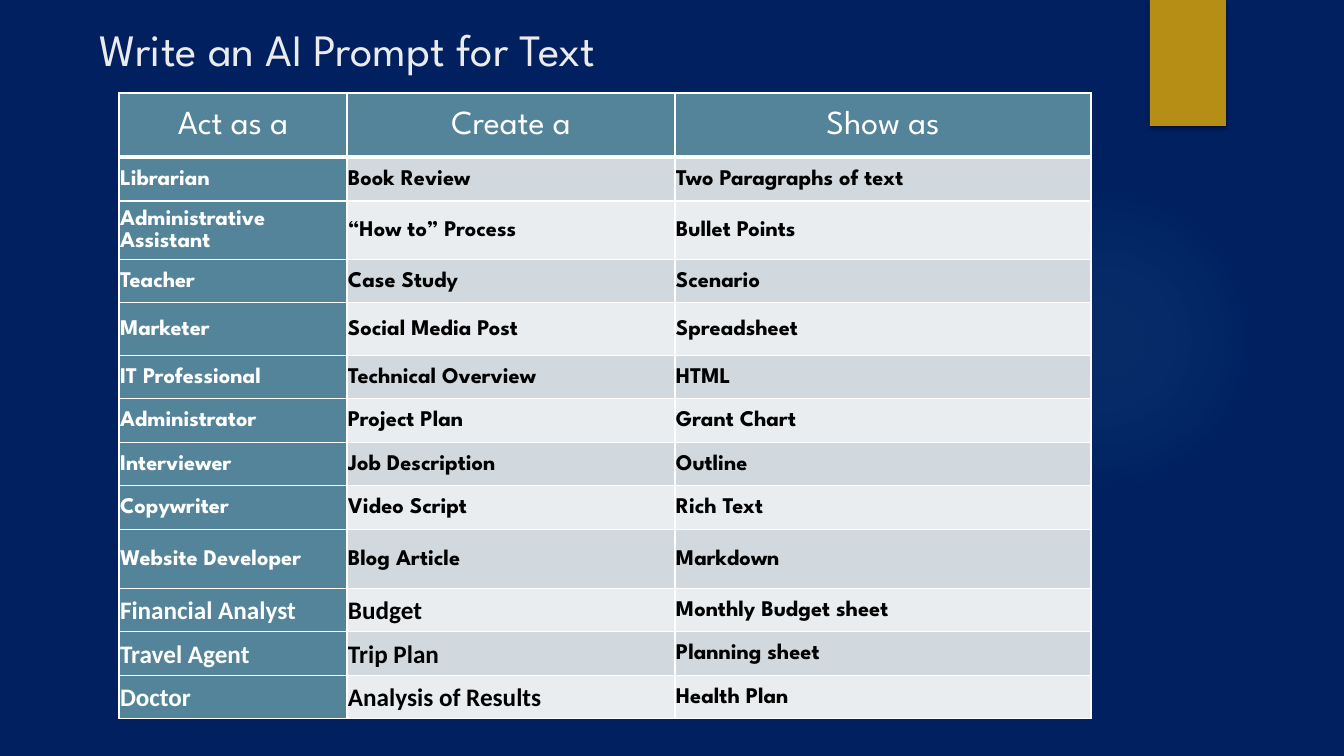
from dataclasses import dataclass

from pptx import Presentation
from pptx.dml.color import RGBColor
from pptx.enum.shapes import MSO_SHAPE as Kind
from pptx.enum.text import MSO_ANCHOR as Anchor, PP_ALIGN as Align
from pptx.oxml import parse_xml
from pptx.oxml.ns import qn
from pptx.shapes.autoshape import Shape
from pptx.slide import Slide
from pptx.table import _Cell as Cell
from pptx.text.text import TextFrame
from pptx.util import Emu, Pt

SCALE = 12192000 / 1344  # EMU in one px
NS = 'xmlns:a="http://schemas.openxmlformats.org/drawingml/2006/main"'

NAVY = RGBColor(0x00, 0x20, 0x60)
GOLD = RGBColor(0xB6, 0x8E, 0x15)
AQUA = RGBColor(0x50, 0xB9, 0xC1)
TEAL = RGBColor(0x54, 0x84, 0x9A)
DARK = RGBColor(0xD1, 0xD9, 0xDE)
LIGHT = RGBColor(0xE9, 0xED, 0xEF)
PALE = RGBColor(0xEB, 0xEB, 0xEB)
WHITE = RGBColor(0xFF, 0xFF, 0xFF)
BLACK = RGBColor(0x00, 0x00, 0x00)

SPARTAN = "League Spartan"
CALIBRI = "Calibri"


@dataclass
class Row:
    high: int
    texts: tuple[str, str, str]
    font: str = SPARTAN  # font of the first two columns
    size: int = 16


COLS = (228, 328, 416)
HEAD = Row(64, ("Act as a", "Create a", "Show as"), size=24)
ROWS = (
    Row(44, ("Librarian", "Book Review", "Two Paragraphs of text")),
    Row(59, ("Administrative Assistant", "“How to” Process", "Bullet Points")),
    Row(43, ("Teacher", "Case Study", "Scenario")),
    Row(53, ("Marketer", "Social Media Post", "Spreadsheet")),
    Row(43, ("IT Professional", "Technical Overview", "HTML")),
    Row(44, ("Administrator", "Project Plan", "Grant Chart")),
    Row(43, ("Interviewer", "Job Description", "Outline")),
    Row(44, ("Copywriter", "Video Script", "Rich Text")),
    Row(59, ("Website Developer", "Blog Article", "Markdown")),
    Row(43, ("Financial Analyst", "Budget", "Monthly Budget sheet"), CALIBRI, 18),
    Row(44, ("Travel Agent", "Trip Plan", "Planning sheet"), CALIBRI, 18),
    Row(43, ("Doctor", "Analysis of Results", "Health Plan"), CALIBRI, 18),
)


def px(num: int) -> Emu:
    return Emu(round(num * SCALE))


def write(frame: TextFrame, text: str, *, size: int, color: RGBColor,
          font: str = SPARTAN, bold: bool = False,
          align: Align = Align.LEFT, space: float = 1.0) -> None:
    para = frame.paragraphs[0]
    para.alignment = align
    para.line_spacing = space
    run = para.add_run()
    run.text = text
    run.font.name = font
    run.font.size = Pt(size)
    run.font.bold = bold
    run.font.color.rgb = color


def shape(slide: Slide, kind: Kind, box: tuple[int, int, int, int]) -> Shape:
    item = slide.shapes.add_shape(kind, *map(px, box))
    item.shadow.inherit = False
    item.line.fill.background()
    return item


def glow(item: Shape) -> None:
    stops = "".join(
        f'<a:gs pos="{pos}000"><a:srgbClr val="{AQUA}">'
        f'<a:alpha val="{alpha}000"/></a:srgbClr></a:gs>'
        for pos, alpha in ((0, 7), (36, 6), (69, 0)))
    geom = item.element.spPr.find(qn("a:prstGeom"))
    geom.addnext(parse_xml(
        f'<a:gradFill {NS}><a:gsLst>{stops}</a:gsLst><a:path path="circle">'
        '<a:fillToRect l="50000" t="50000" r="50000" b="50000"/>'
        '</a:path></a:gradFill>'))


def shade(item: Shape) -> None:
    item.element.spPr.find(qn("a:effectLst")).append(parse_xml(
        f'<a:outerShdw {NS} blurRad="{Pt(3)}" dist="{Pt(2)}" dir="5400000" '
        f'rotWithShape="0"><a:srgbClr val="{BLACK}"><a:alpha val="45000"/>'
        '</a:srgbClr></a:outerShdw>'))


def style(cell: Cell, fill: RGBColor, base: int = 1) -> None:
    cell.vertical_anchor = Anchor.MIDDLE
    cell.margin_left = cell.margin_right = px(1)
    cell.margin_top = cell.margin_bottom = px(1)
    props = cell._tc.get_or_add_tcPr()
    for side, width in zip("LRTB", (1, 1, 1, base)):
        props.append(parse_xml(
            f'<a:ln{side} {NS} w="{Pt(width)}"><a:solidFill>'
            f'<a:srgbClr val="{WHITE}"/></a:solidFill></a:ln{side}>'))
    cell.fill.solid()
    cell.fill.fore_color.rgb = fill


def grid(slide: Slide, left: int, top: int) -> None:
    rows = (HEAD, *ROWS)
    high = sum(row.high for row in rows)
    table = slide.shapes.add_table(
        len(rows), len(COLS), px(left), px(top), px(sum(COLS)), px(high)).table
    for col, wide in zip(table.columns, COLS):
        col.width = px(wide)
    for i, row in enumerate(rows):
        table.rows[i].height = px(row.high)
        head = row is HEAD
        band = DARK if i % 2 else LIGHT
        for j, text in enumerate(row.texts):
            cell = table.cell(i, j)
            key = head or j == 0
            last = j == 2 and not head
            style(cell, TEAL if key else band, 3 if head else 1)
            write(cell.text_frame, text, space=1.07, bold=not head,
                  size=16 if last else row.size,
                  font=SPARTAN if last else row.font,
                  color=WHITE if key else BLACK,
                  align=Align.CENTER if head else Align.LEFT)


def main() -> None:
    deck = Presentation()
    deck.slide_width, deck.slide_height = px(1344), px(756)
    slide = deck.slides.add_slide(deck.slide_layouts[5])
    slide.background.fill.solid()
    slide.background.fill.fore_color.rgb = NAVY

    # Backdrop: soft glow and gold tab
    glow(shape(slide, Kind.OVAL, (949, 184, 310, 310)))
    tab = shape(slide, Kind.RECTANGLE, (1150, 0, 76, 126))
    tab.fill.solid()
    tab.fill.fore_color.rgb = GOLD
    shade(tab)

    # Title, in front of the backdrop
    title = slide.shapes.title
    title.element.getparent().append(title.element)
    title.left, title.top, title.width, title.height = map(px, (89, 5, 1191, 88))
    title.text_frame.vertical_anchor = Anchor.MIDDLE
    write(title.text_frame, "Write an AI Prompt for Text", size=32, color=PALE)

    # Table of prompt parts
    grid(slide, 119, 93)
    deck.save("out.pptx")


if __name__ == "__main__":
    main()
